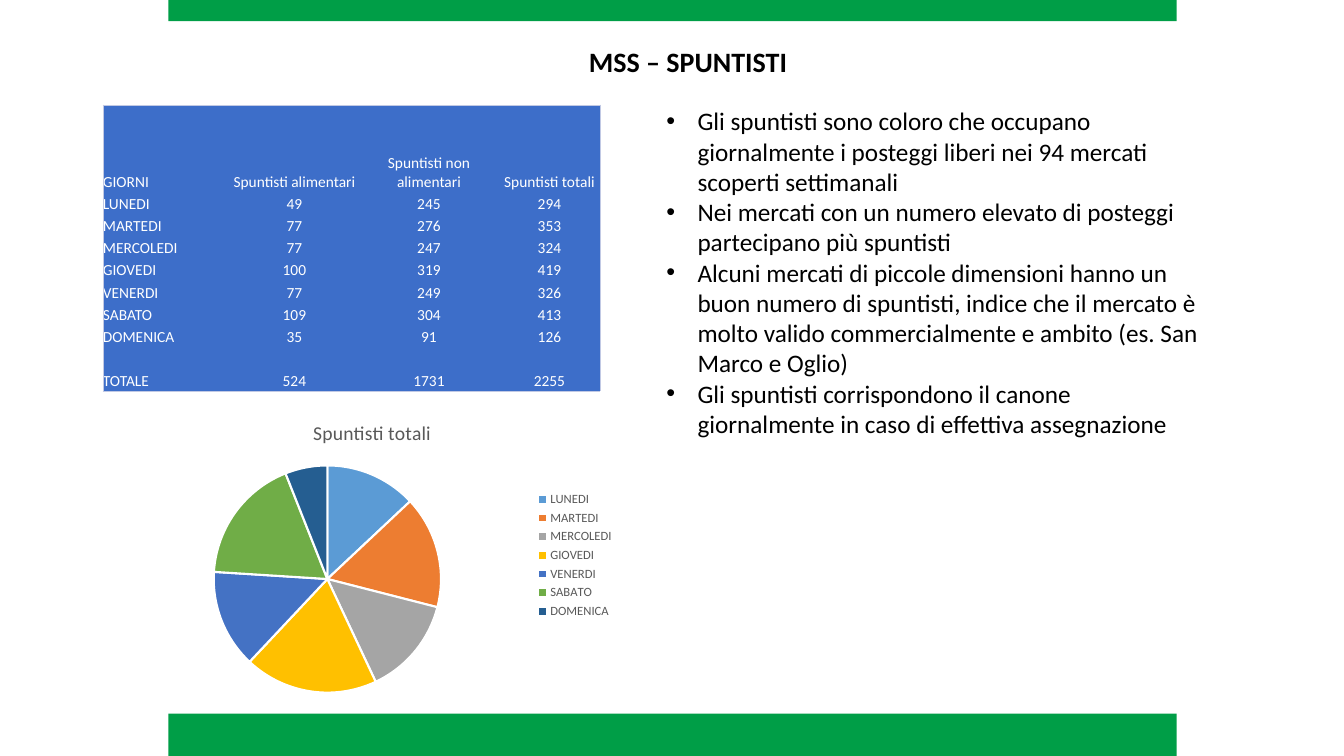
"""Build the slide on MSS spuntisti: weekly table, pie chart and notes."""
from lxml.etree import SubElement
from pptx import Presentation
from pptx.chart.data import CategoryChartData
from pptx.dml.color import RGBColor
from pptx.enum.chart import XL_CHART_TYPE as ChartType, XL_LEGEND_POSITION as LegendPosition
from pptx.enum.shapes import MSO_SHAPE as Shape
from pptx.enum.text import MSO_ANCHOR as Anchor, MSO_AUTO_SIZE as AutoSize, PP_ALIGN as Align
from pptx.oxml.ns import qn
from pptx.util import Inches, Pt

FONT = "Calibri"
GREEN = RGBColor(0x00, 0x9E, 0x47)
TABLE_BLUE = RGBColor(0x3D, 0x6E, 0xC9)
BORDER = RGBColor(0xC1, 0xC9, 0xE4)
BLACK = RGBColor(0x00, 0x00, 0x00)
WHITE = RGBColor(0xFF, 0xFF, 0xFF)
GREY = RGBColor(0x59, 0x59, 0x59)
SLICES = [RGBColor.from_string(code) for code in
          ("5B9BD5", "ED7D31", "A5A5A5", "FFC000", "4472C4", "70AD47", "255E91")]
NO_STYLE = "{2D5ABB26-0587-4C30-8999-92F81FD0307C}"


def write(paragraph, text, size, color, bold=False, align=Align.LEFT, spacing=1.0, bullet=False):
    paragraph.alignment = align
    paragraph.line_spacing = spacing
    if bullet:
        properties = paragraph._p.get_or_add_pPr()
        properties.set("marL", str(Inches(0.31)))
        properties.set("indent", str(Inches(-0.31)))
        SubElement(properties, qn("a:buFont")).set("typeface", "Arial")
        SubElement(properties, qn("a:buChar")).set("char", "•")
    if not text:
        SubElement(paragraph._p, qn("a:endParaRPr")).set("sz", str(size * 100))
        return
    run = paragraph.add_run()
    run.text = text
    run.font.name = FONT
    run.font.size = Pt(size)
    run.font.bold = bold
    run.font.color.rgb = color


def add_border(cell, side):
    line = SubElement(cell._tc.get_or_add_tcPr(), qn(f"a:ln{side}"), w=str(Pt(0.5)))
    fill = SubElement(line, qn("a:solidFill"))
    SubElement(fill, qn("a:srgbClr")).set("val", str(BORDER))


prs = Presentation()
prs.slide_width = Inches(13.33)
prs.slide_height = Inches(7.5)
slide = prs.slides.add_slide(prs.slide_layouts[5])

for top, height in ((0, 0.21), (7.08, 0.42)):
    band = slide.shapes.add_shape(Shape.RECTANGLE, Inches(1.67), Inches(top), Inches(10), Inches(height))
    band.shadow.inherit = False
    band.fill.solid()
    band.fill.fore_color.rgb = GREEN
    band.line.fill.background()

title = slide.shapes.title
title.left, title.top, title.width, title.height = (Inches(n) for n in (5.74, 0.22, 2.47, 0.61))
title.text_frame.auto_size = AutoSize.NONE
title.text_frame.vertical_anchor = Anchor.TOP
write(title.text_frame.paragraphs[0], "MSS – SPUNTISTI", 20, BLACK, bold=True, spacing=1.5)

notes = [
    "Gli spuntisti sono coloro che occupano giornalmente i posteggi liberi nei 94 mercati scoperti settimanali",
    "Nei mercati con un numero elevato di posteggi partecipano più spuntisti",
    "Alcuni mercati di piccole dimensioni hanno un buon numero di spuntisti, indice che il mercato è "
    "molto valido commercialmente e ambito (es. San Marco e Oglio)",
    "Gli spuntisti corrispondono il canone giornalmente in caso di effettiva assegnazione",
]
notes_frame = slide.shapes.add_textbox(Inches(6.51), Inches(1), Inches(5.61), Inches(3.43)).text_frame
notes_frame.word_wrap = True
for index, note in enumerate(notes):
    paragraph = notes_frame.add_paragraph() if index else notes_frame.paragraphs[0]
    write(paragraph, note, 18, BLACK, bullet=True)

rows = [
    ("GIORNI", "Spuntisti alimentari", "Spuntisti non alimentari", "Spuntisti totali"),
    ("LUNEDI", "49", "245", "294"),
    ("MARTEDI", "77", "276", "353"),
    ("MERCOLEDI", "77", "247", "324"),
    ("GIOVEDI", "100", "319", "419"),
    ("VENERDI", "77", "249", "326"),
    ("SABATO", "109", "304", "413"),
    ("DOMENICA", "35", "91", "126"),
    ("", "", "", ""),
    ("TOTALE", "524", "1731", "2255"),
]
column_widths = (1.26, 1.28, 1.39, 1)
last_row, last_column = len(rows) - 1, len(column_widths) - 1
table = slide.shapes.add_table(len(rows), len(column_widths), Inches(1.02), Inches(1.04),
                               Inches(4.92), Inches(2.86)).table
table._tbl.tblPr.find(qn("a:tableStyleId")).text = NO_STYLE
table.first_row = table.horz_banding = False
for column, width in zip(table.columns, column_widths):
    column.width = Inches(width)
for r, row in enumerate(rows):
    table.rows[r].height = Inches(0.22 if r else 0.86)
    for c, text in enumerate(row):
        cell = table.cell(r, c)
        cell.margin_left = cell.margin_right = cell.margin_top = cell.margin_bottom = 0
        cell.vertical_anchor = Anchor.BOTTOM
        outer_sides = {"L": c == 0, "R": c == last_column, "T": r == 0, "B": r == last_row}
        for side, is_outer in outer_sides.items():
            if is_outer:
                add_border(cell, side)
        cell.fill.solid()
        cell.fill.fore_color.rgb = TABLE_BLUE
        write(cell.text_frame.paragraphs[0], text, 11, WHITE, align=Align.CENTER if c else Align.LEFT)

shares = CategoryChartData()
shares.categories = [row[0] for row in rows[1:8]]
shares.add_series("Spuntisti totali", (13, 16, 14, 19, 14, 18, 6))
pie = slide.shapes.add_chart(ChartType.PIE, Inches(1.19), Inches(4.01), Inches(5), Inches(3), shares).chart
pie.font.name = FONT
pie.font.size = Pt(10)
pie.font.color.rgb = BLACK
pie.has_title = True
write(pie.chart_title.text_frame.paragraphs[0], "Spuntisti totali", 14, GREY, align=Align.CENTER)
pie.chart_title.include_in_layout = False
pie.has_legend = True
pie.legend.position = LegendPosition.RIGHT
pie.legend.include_in_layout = False
pie.legend.font.name = FONT
pie.legend.font.size = Pt(9)
pie.legend.font.color.rgb = GREY
pie.plots[0].vary_by_categories = True
for index, color in enumerate(SLICES):
    day_slice = pie.plots[0].series[0].points[index].format
    day_slice.fill.solid()
    day_slice.fill.fore_color.rgb = color
    day_slice.line.color.rgb = WHITE
    day_slice.line.width = Pt(1.5)

prs.save("out.pptx")
